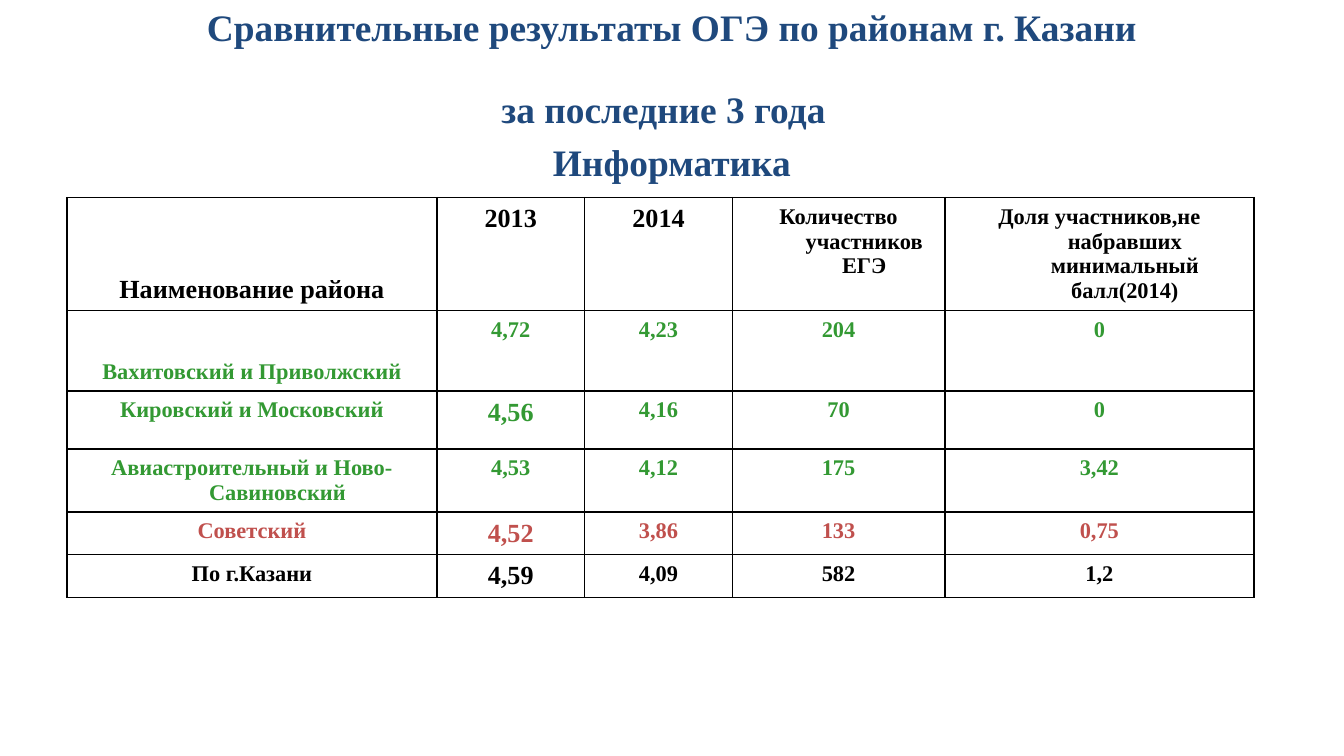
from lxml import etree
from pptx import Presentation
from pptx.dml.color import RGBColor
from pptx.enum.text import MSO_ANCHOR, MSO_AUTO_SIZE, PP_ALIGN
from pptx.oxml.ns import qn
from pptx.util import Inches, Pt

CENTER = PP_ALIGN.CENTER
TOP, MIDDLE, BOTTOM = MSO_ANCHOR.TOP, MSO_ANCHOR.MIDDLE, MSO_ANCHOR.BOTTOM
NO_AUTOFIT = MSO_AUTO_SIZE.NONE

COLORS = {"title": "1F497D", "black": "000000", "green": "339933", "red": "C0504D"}
SERIF = "Times New Roman"
TITLE_FORMAT = {"size": Pt(20), "name": SERIF, "bold": True}
GAP_FORMAT = {"size": Pt(40), "name": "Calibri", "bold": False}

# Content: title runs as (text, format, color, size of the line break after it)
TITLE_RUNS = [
    ("Сравнительные результаты ОГЭ по районам г. Казани", TITLE_FORMAT, "title", 20),
    ("за последние 3 года", TITLE_FORMAT, "title", None),
    (" ", GAP_FORMAT, "black", 40),
    ("Информатика", TITLE_FORMAT, "title", None),
]

# Table rows as (height, color, text sizes, cell texts)
ROWS = [
    (0.84, "black", (14, 14, 14, 12, 12),
     ("Наименование района", "2013", "2014", "Количество участников ЕГЭ",
      "Доля участников,не набравших минимальный балл(2014)")),
    (0.6, "green", (12, 12, 12, 12, 12),
     ("Вахитовский и Приволжский", "4,72", "4,23", "204", "0")),
    (0.43, "green", (12, 14, 12, 12, 12),
     ("Кировский и Московский", "4,56", "4,16", "70", "0")),
    (0.47, "green", (12, 12, 12, 12, 12),
     ("Авиастроительный и Ново-Савиновский", "4,53", "4,12", "175", "3,42")),
    (0.31, "red", (12, 14, 12, 12, 12),
     ("Советский", "4,52", "3,86", "133", "0,75")),
    (0.32, "black", (12, 14, 12, 12, 12),
     ("По г.Казани", "4,59", "4,09", "582", "1,2")),
]
COLUMN_WIDTHS = [2.75, 1.1, 1.1, 1.58, 2.3]
BOTTOM_ANCHORED = {(0, 0), (1, 0)}
INDENT = Inches(0.38)


def add_run(paragraph, text, font_format, color):
    run = paragraph.add_run()
    run.text = text
    for name, value in font_format.items():
        setattr(run.font, name, value)
    run.font.color.rgb = RGBColor.from_string(COLORS[color])


def add_break(paragraph, size):
    line_break = etree.SubElement(paragraph._p, qn("a:br"))
    etree.SubElement(line_break, qn("a:rPr"), sz=str(size * 100))


def set_borders(cell):
    properties = cell._tc.get_or_add_tcPr()
    for index, side in enumerate(("lnL", "lnR", "lnT", "lnB")):
        line = etree.Element(qn("a:" + side), w=str(Pt(1)))
        fill = etree.SubElement(line, qn("a:solidFill"))
        etree.SubElement(fill, qn("a:srgbClr"), val=COLORS["black"])
        properties.insert(index, line)


# Widescreen slide, 16:9
presentation = Presentation()
presentation.slide_width = Inches(10)
presentation.slide_height = Inches(10 * 9 / 16)
slide = presentation.slides.add_slide(presentation.slide_layouts[5])

# Title
title = slide.shapes.title
title.left, title.top, title.width, title.height = map(Inches, (0.5, 0.23, 9, 0.94))
frame = title.text_frame
frame.auto_size = NO_AUTOFIT
frame.vertical_anchor = MIDDLE
paragraph = frame.paragraphs[0]
paragraph.alignment = CENTER
for text, font_format, color, break_size in TITLE_RUNS:
    add_run(paragraph, text, font_format, color)
    if break_size:
        add_break(paragraph, break_size)

# Results table
heights = [row[0] for row in ROWS]
table = slide.shapes.add_table(
    len(ROWS), len(COLUMN_WIDTHS), Inches(0.5), Inches(1.47),
    Inches(sum(COLUMN_WIDTHS)), Inches(sum(heights))).table
table.first_row = table.horz_banding = False
for column, width in zip(table.columns, COLUMN_WIDTHS):
    column.width = Inches(width)

for row_index, (height, color, sizes, texts) in enumerate(ROWS):
    table.rows[row_index].height = Inches(height)
    for column_index, (size, text) in enumerate(zip(sizes, texts)):
        cell = table.cell(row_index, column_index)
        cell.fill.background()
        set_borders(cell)
        at_bottom = (row_index, column_index) in BOTTOM_ANCHORED
        cell.vertical_anchor = BOTTOM if at_bottom else TOP
        paragraph = cell.text_frame.paragraphs[0]
        paragraph.alignment = CENTER
        # Hanging indent
        paragraph_properties = paragraph._p.get_or_add_pPr()
        paragraph_properties.set("marL", str(INDENT))
        paragraph_properties.set("indent", str(-INDENT))
        add_run(paragraph, text, {"size": Pt(size), "name": SERIF, "bold": True}, color)

presentation.save("out.pptx")
